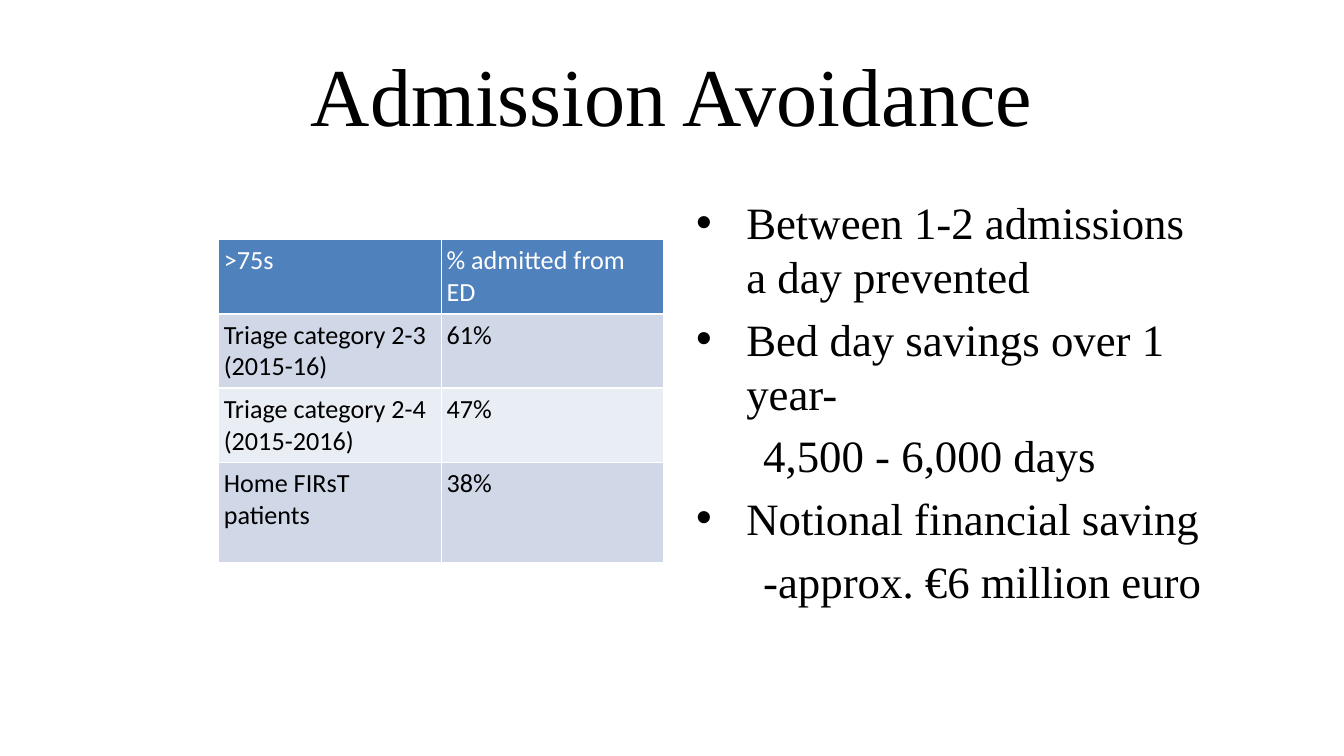
import pptx
import pptx.util
import pptx.dml.color
import pptx.enum.text
from lxml import etree
from pptx.util import Cm, Pt

COLORS = {
    "text": "000000",
    "white": "FFFFFF",
    "header": "4F81BD",
    "band_dark": "D0D8E8",
    "band_light": "E9EDF4",
}
SERIF = "Times New Roman"
NS = "http://schemas.openxmlformats.org/drawingml/2006/main"


def color(name):
    return pptx.dml.color.RGBColor.from_string(COLORS[name])


def style(para, face, size, name):
    para.font.name = face
    para.font.size = Pt(size)
    para.font.color.rgb = color(name)


deck = pptx.Presentation()
deck.slide_width = Cm(25.4)
deck.slide_height = Cm(14.29)
page = deck.slides.add_slide(deck.slide_layouts[1])

title = page.shapes.title
title.left, title.top, title.width, title.height = Cm(1.27), Cm(0.58), Cm(22.86), Cm(2.39)
title.text_frame.text = "Admission Avoidance"
title.text_frame.vertical_anchor = pptx.enum.text.MSO_ANCHOR.MIDDLE
title.text_frame.paragraphs[0].alignment = pptx.enum.text.PP_ALIGN.CENTER
style(title.text_frame.paragraphs[0], SERIF, 44, "text")

rows = [
    (">75s", "% admitted from ED"),
    ("Triage category 2-3 (2015-16)", "61%"),
    ("Triage category 2-4 (2015-2016)", "47%"),
    ("Home FIRsT patients", "38%"),
]
fills = ["header", "band_dark", "band_light", "band_dark"]
heights = [1.39, 1.39, 1.39, 1.9]
table = page.shapes.add_table(4, 2, Cm(4.13), Cm(4.53), Cm(8.42), Cm(sum(heights))).table
for column in table.columns:
    column.width = Cm(4.21)
for r, (words, fill, height) in enumerate(zip(rows, fills, heights)):
    table.rows[r].height = Cm(height)
    for c, word in enumerate(words):
        cell = table.cell(r, c)
        cell.text = word
        cell.margin_left = cell.margin_right = Cm(0.1)
        cell.margin_top = cell.margin_bottom = Cm(0.1)
        para = cell.text_frame.paragraphs[0]
        style(para, "Calibri", 14, "text" if r else "white")
        para.font.bold = False
        cell.fill.solid()
        cell.fill.fore_color.rgb = color(fill)
        properties = cell._tc.get_or_add_tcPr()
        for position, side in enumerate(["lnL", "lnR", "lnT", "lnB"]):
            line = etree.Element(f"{{{NS}}}{side}", w=str(Pt(1)))
            solid = etree.SubElement(line, f"{{{NS}}}solidFill")
            etree.SubElement(solid, f"{{{NS}}}srgbClr", val=COLORS["white"])
            properties.insert(position, line)

points = [
    ("Between 1-2 admissions a day prevented", True),
    ("Bed day savings over 1 year-", True),
    ("4,500 - 6,000 days", False),
    ("Notional financial saving", True),
    ("-approx. €6 million euro", False),
]
body = page.placeholders[1]
body.left, body.top, body.width, body.height = Cm(12.9), Cm(3.56), Cm(10.21), Cm(8.23)
frame = body.text_frame
frame.text = "\n".join(text for text, bulleted in points)
for i, (para, (text, bulleted)) in enumerate(zip(frame.paragraphs, points)):
    para.level = 0 if bulleted else 1
    properties = para._p.get_or_add_pPr()
    properties.set("marL", str(Cm(0.95 if bulleted else 1.27)))
    properties.set("indent", str(Cm(-0.95 if bulleted else 0)))
    if bulleted:
        etree.SubElement(properties, f"{{{NS}}}buFont", typeface="Arial")
        etree.SubElement(properties, f"{{{NS}}}buChar", char="•")
    else:
        etree.SubElement(properties, f"{{{NS}}}buNone")
    para.space_before = Pt(4.8 if i else 0)
    style(para, SERIF, 24, "text")

deck.save("out.pptx")
